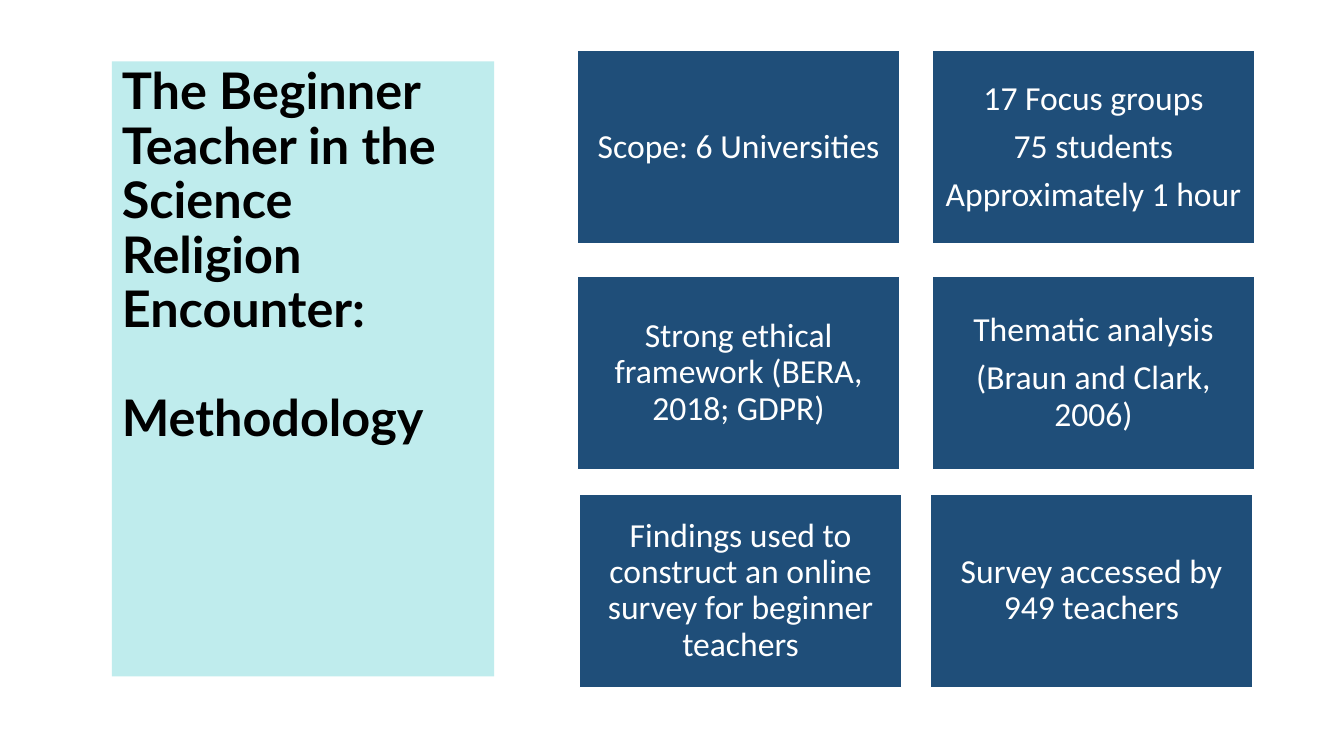
from pptx import Presentation
from pptx.dml.color import RGBColor
from pptx.enum.shapes import MSO_SHAPE
from pptx.enum.text import MSO_ANCHOR, PP_ALIGN
from pptx.util import Inches, Pt

PALE_AQUA = RGBColor(0xBF, 0xEC, 0xED)
NAVY = RGBColor(0x1F, 0x4E, 0x79)
WHITE = RGBColor(0xFF, 0xFF, 0xFF)
BLACK = RGBColor(0, 0, 0)

TITLE = ["The Beginner Teacher in the Science Religion Encounter:", "Methodology"]

# Card size, then each row's top, column lefts and card paragraphs
CARD_WIDTH, CARD_HEIGHT = 3.19, 1.92
CARD_ROWS = [
    (0.5, (5.73, 9.25), (
        ["Scope: 6 Universities"],
        ["17 Focus groups", "75 students", "Approximately 1 hour"])),
    (2.74, (5.73, 9.25), (
        ["Strong ethical framework (BERA, 2018; GDPR)"],
        ["Thematic analysis", "(Braun and Clark, 2006)"])),
    (4.9, (5.75, 9.23), (
        ["Findings used to construct an online survey for beginner teachers"],
        ["Survey accessed by 949 teachers"])),
]


def add_panel(slide, left, top, width, height, fill):
    shape = slide.shapes.add_shape(
        MSO_SHAPE.RECTANGLE, Inches(left), Inches(top), Inches(width), Inches(height))
    shape.shadow.inherit = False
    shape.fill.solid()
    shape.fill.fore_color.rgb = fill
    shape.line.fill.background()
    return shape


def write_paragraphs(shape, lines, font_name, size, color, align, bold=False):
    frame = shape.text_frame
    frame.word_wrap = True
    frame.text = "\n".join(lines)
    for paragraph in frame.paragraphs:
        paragraph.alignment = align
        paragraph.line_spacing = 0.9
        font = paragraph.font
        font.name, font.size, font.bold = font_name, Pt(size), bold
        font.color.rgb = color
    return frame


def add_title(slide):
    panel = add_panel(slide, 1.11, 0.61, 3.79, 6.1, PALE_AQUA)
    frame = write_paragraphs(panel, TITLE, "Lato", 36, BLACK, PP_ALIGN.LEFT, bold=True)
    frame.vertical_anchor = MSO_ANCHOR.TOP
    frame.paragraphs[-1].space_before = Pt(39)


def add_card(slide, left, top, lines):
    card = add_panel(slide, left, top, CARD_WIDTH, CARD_HEIGHT, NAVY)
    card.line.color.rgb = WHITE
    card.line.width = Pt(1)
    frame = write_paragraphs(card, lines, "Calibri", 24, WHITE, PP_ALIGN.CENTER)
    frame.vertical_anchor = MSO_ANCHOR.MIDDLE
    frame.margin_top = frame.margin_bottom = Inches(0.1)
    for paragraph in frame.paragraphs:
        paragraph.space_after = Pt(8.4)


def main():
    presentation = Presentation()
    presentation.slide_width = Inches(13.33)
    presentation.slide_height = Inches(7.5)
    slide = presentation.slides.add_slide(presentation.slide_layouts[6])

    add_title(slide)

    # Methodology cards
    for top, lefts, cards in CARD_ROWS:
        for left, lines in zip(lefts, cards):
            add_card(slide, left, top, lines)

    presentation.save("out.pptx")


if __name__ == "__main__":
    main()
